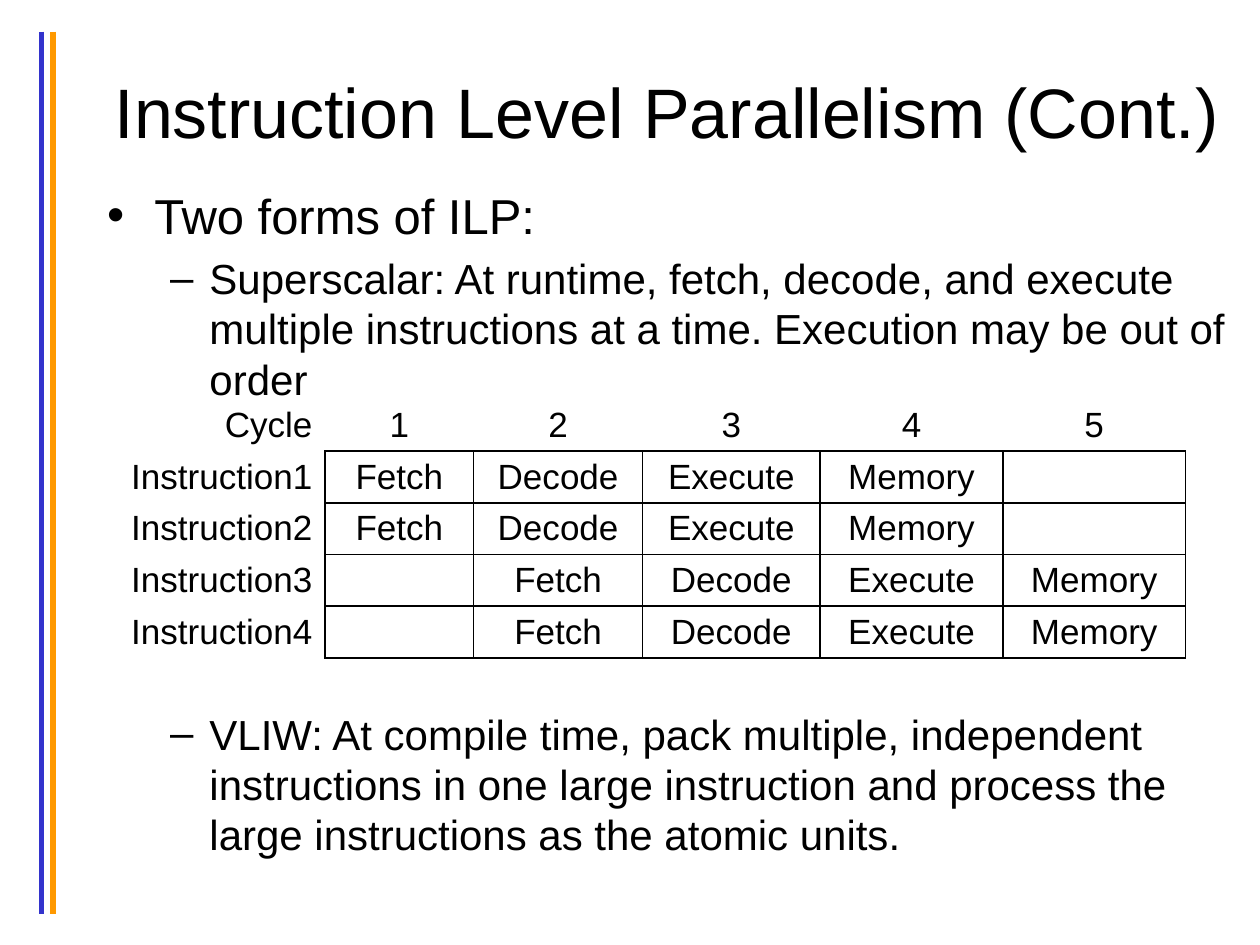
import pptx
import pptx.dml.color
import pptx.enum.shapes
import pptx.enum.text
import pptx.oxml
import pptx.util
from pptx.util import Inches, Pt

ALIGN = pptx.enum.text.PP_ALIGN
ANCHOR = pptx.enum.text.MSO_ANCHOR


def rgb(value):
    return pptx.dml.color.RGBColor.from_string(value)


class SlideBuilder:
    font = "Arial"
    ink = "000000"
    paper = "FFFFFF"

    def __init__(self, slide):
        self.s = slide

    def style(self, p, size, align=None):
        p.font.name = self.font
        p.font.size = Pt(size)
        p.font.color.rgb = rgb(self.ink)
        if align is not None:
            p.alignment = align

    def rule(self, x, top, bottom, color, width):
        line = self.s.shapes.add_connector(
            pptx.enum.shapes.MSO_CONNECTOR.STRAIGHT,
            Inches(x), Inches(top), Inches(x), Inches(bottom))
        line.line.color.rgb = rgb(color)
        line.line.width = Pt(width)
        line._element.spPr.append(pptx.oxml.parse_xml(
            '<a:effectLst xmlns:a="http://schemas.openxmlformats.org/drawingml/2006/main"/>'))

    def place(self, sp, left, top, width, height):
        sp.left, sp.top = Inches(left), Inches(top)
        sp.width, sp.height = Inches(width), Inches(height)
        sp.text_frame.auto_size = pptx.enum.text.MSO_AUTO_SIZE.NONE

    def title(self, text, box):
        sp = self.s.shapes.title
        self.place(sp, *box)
        sp.text_frame.text = text
        sp.text_frame.vertical_anchor = ANCHOR.MIDDLE
        self.style(sp.text_frame.paragraphs[0], 40, ALIGN.CENTER)

    def body(self, items, box):
        """Each item is (level, size, space before or None, text)."""
        sp = self.s.placeholders[1]
        self.place(sp, *box)
        tf = sp.text_frame
        for i, (level, size, gap, text) in enumerate(items):
            p = tf.add_paragraph() if i else tf.paragraphs[0]
            p.text, p.level = text, level
            self.style(p, size)
            if gap is not None:
                p.space_before = Pt(gap)

    def border(self, cell, side, color):
        tcPr = cell._tc.get_or_add_tcPr()
        tcPr.append(pptx.oxml.parse_xml(
            f'<a:ln{side} xmlns:a="http://schemas.openxmlformats.org/drawingml/2006/main" '
            f'w="{Pt(1)}"><a:solidFill><a:srgbClr val="{color}"/></a:solidFill></a:ln{side}>'))

    def table(self, rows, widths, row_height, left, top):
        table = self.s.shapes.add_table(
            len(rows), len(widths), Inches(left), Inches(top),
            Inches(sum(widths)), Inches(row_height * len(rows))).table
        table.first_row = table.horz_banding = False
        for column, width in zip(table.columns, widths):
            column.width = Inches(width)
        for r, row in enumerate(rows):
            table.rows[r].height = Inches(row_height)
            for c, text in enumerate(row):
                cell = table.cell(r, c)
                cell.text = text
                cell.vertical_anchor = ANCHOR.BOTTOM
                self.style(cell.text_frame.paragraphs[0], 20,
                           ALIGN.CENTER if c else ALIGN.RIGHT)
                # Only edges that touch the inner grid are black
                black = {"L": r and c, "R": r, "T": r and c, "B": c}
                for side, on in black.items():
                    self.border(cell, side, self.ink if on else self.paper)
                cell.fill.background()


def main():
    prs = pptx.Presentation()
    prs.slide_width, prs.slide_height = Inches(10), Inches(7.5)
    slide = SlideBuilder(prs.slides.add_slide(prs.slide_layouts[1]))

    # Vertical rules on the left
    for x, color in ((0.33, "3333CC"), (0.42, "FF9900")):
        slide.rule(x, 0.25, 7.25, color, 3)

    # Title and list, with room for the table before the last item
    slide.title("Instruction Level Parallelism (Cont.)", (0.75, 0.25, 9.08, 1.25))
    slide.body([
        (0, 28, None, "Two forms of ILP:"),
        (1, 24, None, "Superscalar: At runtime, fetch, decode, and execute multiple "
                      "instructions at a time. Execution may be out of order"),
        (1, 24, 174, "VLIW: At compile time, pack multiple, independent instructions in "
                     "one large instruction and process the large instructions as the "
                     "atomic units."),
    ], (0.75, 1.42, 9.25, 2.42))

    # Pipeline table: two instructions start in each cycle
    stages = ["Fetch", "Decode", "Execute", "Memory"]
    rows = [["Cycle", "1", "2", "3", "4", "5"]]
    for n in range(4):
        cycles = ["", *stages] if n >= 2 else [*stages, ""]
        rows.append([f"Instruction{n + 1}", *cycles])
    slide.table(rows, [1.83, 1.18, 1.34, 1.41, 1.45, 1.45], 0.41, 0.75, 3.17)

    prs.save("out.pptx")


if __name__ == "__main__":
    main()
